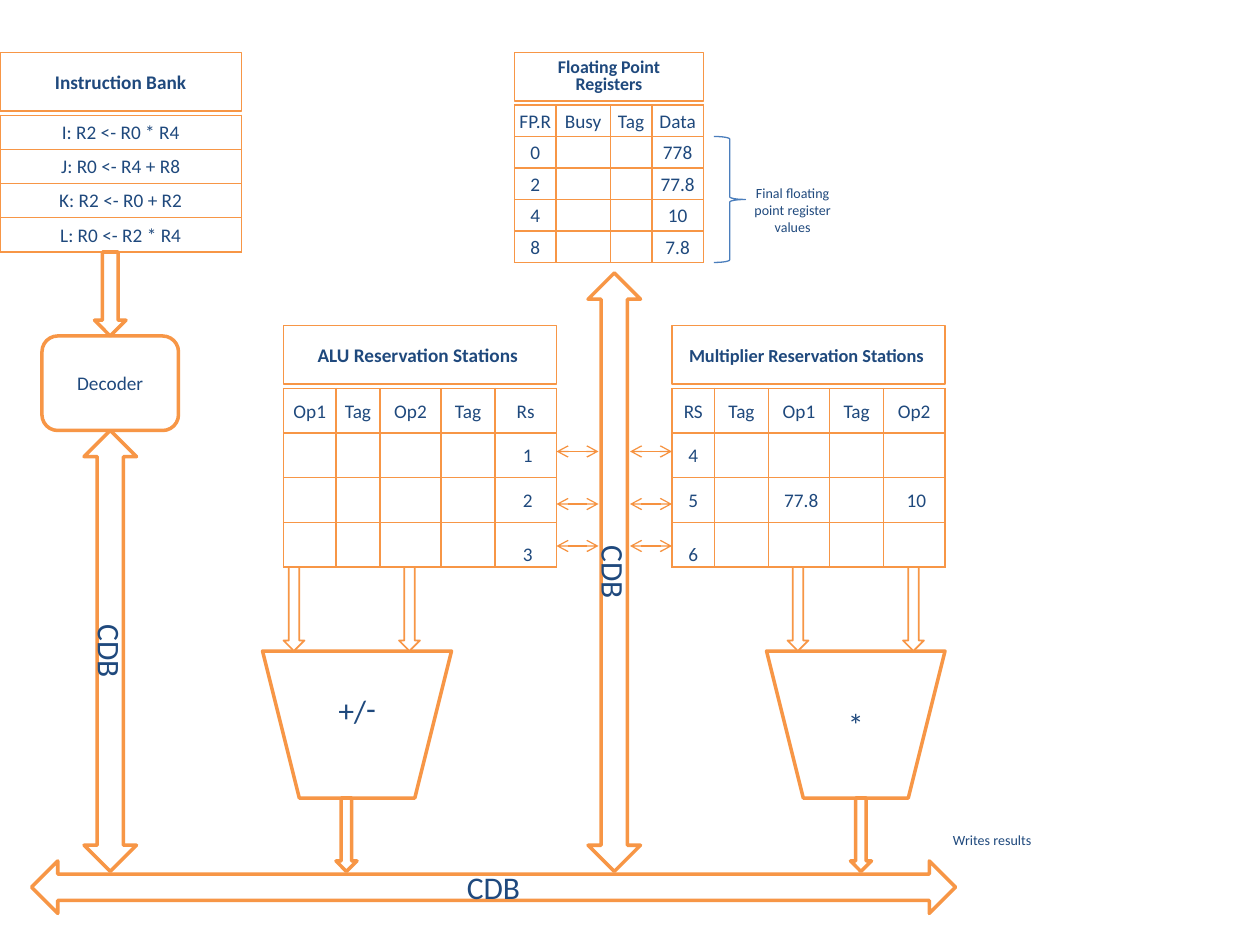
from lxml import etree
from pptx import Presentation
from pptx.dml.color import RGBColor
from pptx.enum.shapes import MSO_CONNECTOR, MSO_SHAPE
from pptx.enum.text import MSO_ANCHOR, PP_ALIGN
from pptx.oxml.ns import qn
from pptx.util import Inches, Pt

RECTANGLE = MSO_SHAPE.RECTANGLE
ROUNDED = MSO_SHAPE.ROUNDED_RECTANGLE
TRAPEZOID = MSO_SHAPE.TRAPEZOID
DOWN_ARROW = MSO_SHAPE.DOWN_ARROW
BUS_ARROW = MSO_SHAPE.LEFT_RIGHT_ARROW
BRACE = MSO_SHAPE.RIGHT_BRACE
STRAIGHT = MSO_CONNECTOR.STRAIGHT
CENTER = PP_ALIGN.CENTER
MIDDLE = MSO_ANCHOR.MIDDLE
BOTTOM = MSO_ANCHOR.BOTTOM

ORANGE = "F79646"
LINK_ORANGE = "F69240"
BLUE = "4B7EBC"
NAVY = "1F497D"
WHITE = "FFFFFF"

deck = Presentation()
deck.slide_width = Inches(10)
deck.slide_height = Inches(7.5)
page = deck.slides.add_slide(deck.slide_layouts[6])
unit = deck.slide_width / 120


def paint(fill, color):
    if color is None:
        fill.background()
    else:
        fill.solid()
        fill.fore_color.rgb = RGBColor.from_string(color)


def write(frame, text, size=11, bold=False, spacing=None):
    frame.word_wrap = True
    para = frame.paragraphs[0]
    para.alignment = CENTER
    para.line_spacing = spacing
    if text:
        span = para.add_run()
        span.text = text
        span.font.name = "Calibri"
        span.font.size = Pt(size)
        span.font.bold = bold
        paint(span.font.fill, NAVY)
    else:
        etree.SubElement(para._p, qn("a:endParaRPr"), sz=str(size * 100))


tables = [
    ((0, 11, 23, 13), [1],
     [["I: R2 <- R0 * R4"], ["J: R0 <- R4 + R8"],
      ["K: R2 <- R0 + R2"], ["L: R0 <- R2 * R4"]]),
    ((49, 10, 18, 15), [33, 43, 33, 41],
     [["FP.R", "Busy", "Tag", "Data"], ["0", "", "", "778"],
      ["2", "", "", "77.8"], ["4", "", "", "10"], ["8", "", "", "7.8"]]),
    ((27, 37, 26, 17), [42, 35, 49, 43, 49],
     [["Op1", "Tag", "Op2", "Tag", "Rs"], ["", "", "", "", " 1"],
      ["", "", "", "", " 2"], ["", "", "", "", " 3"]]),
    ((64, 37, 26, 17), [34, 43, 49, 43, 49],
     [["RS", "Tag", "Op1", "Tag", "Op2"], ["4", "", "", "", ""],
      ["5", "", " 77.8", "", " 10"], ["6", "", "", "", ""]]),
]
for area, shares, rows in tables:
    place = [round(length * unit) for length in area]
    table = page.shapes.add_table(len(rows), len(shares), *place).table
    table.first_row = False
    table.horz_banding = False
    for column, share in zip(table.columns, shares):
        column.width = round(place[2] * share / sum(shares))
    for row, texts in zip(table.rows, rows):
        row.height = round(place[3] / len(rows))
        for cell, text in zip(row.cells, texts):
            cell.margin_left = cell.margin_right = cell.margin_top = Inches(0.01)
            cell.margin_bottom = 0
            cell.vertical_anchor = BOTTOM if text in (" 3", "6") else MIDDLE
            write(cell.text_frame, text)
            properties = cell._tc.get_or_add_tcPr()
            for side in ("a:lnL", "a:lnR", "a:lnT", "a:lnB"):
                border = etree.SubElement(properties, qn(side), w=str(Pt(1)))
                solid = etree.SubElement(border, qn("a:solidFill"))
                etree.SubElement(solid, qn("a:srgbClr"), val=ORANGE)
            paint(cell.fill, None)

for left in (53, 60):
    for top in (43, 48, 52):
        ends = [round(length * unit) for length in (left, top, left + 4, top)]
        link = page.shapes.add_connector(STRAIGHT, *ends)
        link.line.width = Pt(0.75)
        paint(link.line.fill, LINK_ORANGE)
        stroke = link.line._get_or_add_ln()
        for end in ("a:headEnd", "a:tailEnd"):
            etree.SubElement(stroke, qn(end), type="arrow")
        etree.SubElement(link._element.spPr, qn("a:effectLst"))

heading = {"bold": True}
large = {"size": 18}
small = {"size": 8}
shapes = [
    (RECTANGLE, (0, 5, 23, 5.6), 0, WHITE, ORANGE, 1, "Instruction Bank", heading),
    (RECTANGLE, (49, 5, 18, 4.6), 0, WHITE, ORANGE, 1, "Floating Point Registers",
     {"bold": True, "size": 10.2, "spacing": 0.8}),
    (RECTANGLE, (27, 31, 26, 5.6), 0, WHITE, ORANGE, 1, "ALU Reservation Stations ", heading),
    (RECTANGLE, (64, 31, 26, 5.6), 0, WHITE, ORANGE, 1, "Multiplier Reservation Stations ",
     {"bold": True, "size": 10.5}),
    (ROUNDED, (4, 32, 13, 9), 0, WHITE, ORANGE, 2, "Decoder", {}),
    (RECTANGLE, (89, 78, 11, 4), 0, WHITE, None, 1, "Writes results", small),
    (RECTANGLE, (70, 11, 11, 18), 0, WHITE, None, 1,
     "Final floating point register values", small),
    (TRAPEZOID, (25, 62, 18, 14), 180, None, ORANGE, 2, "-/+", large),
    (TRAPEZOID, (73, 62, 17, 14), 180, None, ORANGE, 2, "*", large),
    (DOWN_ARROW, (9, 24, 3, 8), 0, WHITE, ORANGE, 2, "", {}),
    *[(DOWN_ARROW, (left, 54, 2, 8), 0, WHITE, ORANGE, 1, "", {}) for left in (27, 38, 75, 86)],
    *[(DOWN_ARROW, (left, 76, 2, 7), 0, None, ORANGE, 2, "", {}) for left in (32, 81)],
    (BUS_ARROW, (30, 52, 57, 5), 90, None, ORANGE, 2, "CDB", large),
    (BUS_ARROW, (3, 82, 88, 5), 0, None, ORANGE, 2, "CDB", large),
    (BUS_ARROW, (-10.5, 59.5, 42, 5), 90, None, ORANGE, 2, "CDB", large),
    (BRACE, (68, 13, 3, 12), 0, None, BLUE, 0.75, "", {}),
]
for kind, area, angle, fill, outline, weight, text, style in shapes:
    box = page.shapes.add_shape(kind, *[round(length * unit) for length in area])
    box.rotation = angle
    box.shadow.inherit = False
    paint(box.fill, fill)
    box.line.width = Pt(weight)
    paint(box.line.fill, outline)
    if text:
        box.text_frame.vertical_anchor = MIDDLE
        write(box.text_frame, text, **style)

deck.save("out.pptx")
